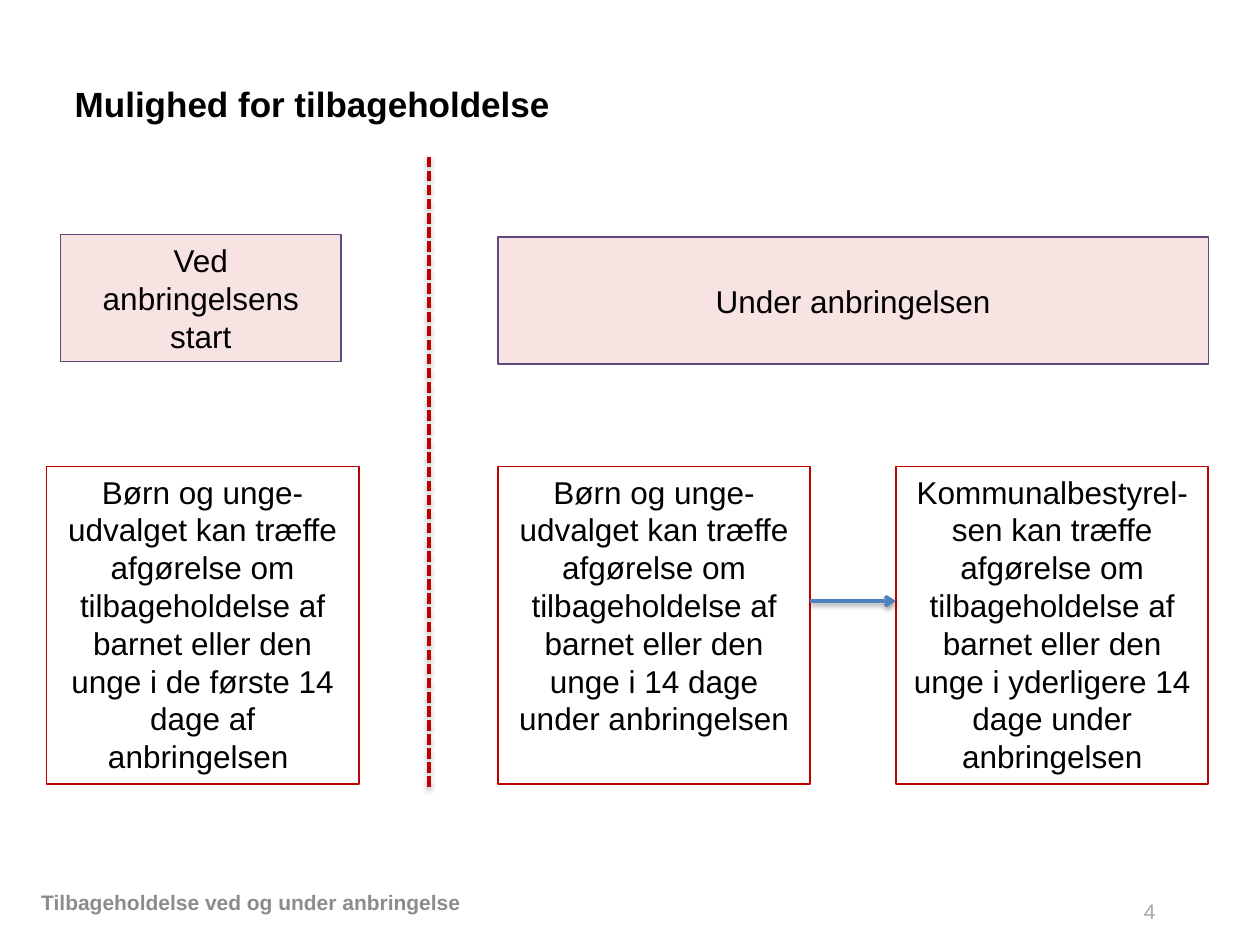
import dataclasses

import pptx
import pptx.dml.color
import pptx.enum.dml
import pptx.enum.shapes
import pptx.enum.text
import pptx.oxml
import pptx.oxml.ns
import pptx.util

Pt = pptx.util.Pt
ALIGN = pptx.enum.text.PP_ALIGN
ANCHOR = pptx.enum.text.MSO_ANCHOR
NS = pptx.oxml.ns.nsdecls("a")


@dataclasses.dataclass(frozen=True)
class Theme:
    """Colours, font and type sizes of the slide."""
    font: str = "Arial"
    ink: str = "000000"
    red: str = "C00000"
    purple: str = "604A7B"
    blue: str = "4F81BD"
    footer: str = "8C8C8C"
    number: str = "A6A6A6"
    title_size: int = 20
    body_size: int = 18
    small_size: int = 12
    tint: int = 11


T = Theme()


def rgb(value):
    """Turn a hex string into a colour."""
    return pptx.dml.color.RGBColor.from_string(value)


def write(shape, text, size=T.body_size, color=T.ink, bold=False,
          align=ALIGN.LEFT, anchor=ANCHOR.TOP):
    """Put formatted text into a shape."""
    tf = shape.text_frame
    tf.word_wrap = True
    tf.vertical_anchor = anchor
    p = tf.paragraphs[0]
    p.alignment = align
    r = p.add_run()
    r.text = text
    r.font.name, r.font.size, r.font.bold = T.font, Pt(size), bold
    r.font.color.rgb = rgb(color)


def add_title(s, text, box):
    """Place the title placeholder in its box."""
    sp = s.shapes.title
    sp.left, sp.top, sp.width, sp.height = map(Pt, box)
    write(sp, text, size=T.title_size, bold=True, anchor=ANCHOR.MIDDLE)


def add_box(s, text, box, line, weight, fill=None, anchor=ANCHOR.TOP):
    """Add an outlined box with centred text and an optional tint."""
    sp = s.shapes.add_shape(pptx.enum.shapes.MSO_SHAPE.RECTANGLE, *map(Pt, box))
    sp.shadow.inherit = False
    sp.line.color.rgb = rgb(line)
    sp.line.width = Pt(weight)
    if fill:
        sp.fill.solid()
        sp.fill.fore_color.rgb = rgb(fill)
        color = sp.fill._xPr.find(".//" + pptx.oxml.ns.qn("a:srgbClr"))
        color.append(pptx.oxml.parse_xml(f'<a:alpha {NS} val="{T.tint * 1000}"/>'))
    else:
        sp.fill.background()
    write(sp, text, align=ALIGN.CENTER, anchor=anchor)


def add_heading(s, text, box):
    """Add a tinted phase heading."""
    add_box(s, text, box, T.purple, 0.75, fill=T.red, anchor=ANCHOR.MIDDLE)


def add_decision(s, text, box):
    """Add a red-framed decision box."""
    add_box(s, text, box, T.red, 1)


def add_line(s, ends, color, dash=None, arrow=False):
    """Add a straight line with a soft shadow below it."""
    kind = pptx.enum.shapes.MSO_CONNECTOR.STRAIGHT
    c = s.shapes.add_connector(kind, *map(Pt, ends))
    c.line.color.rgb = rgb(color)
    c.line.width = Pt(2)
    if dash:
        c.line.dash_style = dash
    if arrow:
        c.line._get_or_add_ln().append(
            pptx.oxml.parse_xml(f'<a:tailEnd {NS} type="arrow"/>'))
    c._element.spPr.append(pptx.oxml.parse_xml(
        f'<a:effectLst {NS}><a:outerShdw blurRad="{Pt(3.1)}" dist="{Pt(1.6)}" '
        f'dir="5400000" rotWithShape="0"><a:srgbClr val="{T.ink}">'
        '<a:alpha val="38000"/></a:srgbClr></a:outerShdw></a:effectLst>'))


def add_label(s, text, box, **fmt):
    """Add a small text box."""
    write(s.shapes.add_textbox(*map(Pt, box)), text, size=T.small_size, **fmt)


def add_start_phase(s, left, top):
    """Place the column for the start of the placement."""
    add_heading(s, "Ved anbringelsens start", (left + 8, top, 160.5, 72.5))
    add_decision(s, "Børn og unge-udvalget kan træffe afgørelse om tilbageholdelse "
                 "af barnet eller den unge i de første 14 dage af anbringelsen ",
                 (left, top + 132.5, 178.5, 181.5))


def add_later_phase(s, left, top, width):
    """Place the heading and two linked decisions during the placement."""
    add_heading(s, "Under anbringelsen", (left, top, width, 72.5))
    w, y = 178.5, top + 131
    right = left + width - w
    add_decision(s, "Børn og unge-udvalget kan træffe afgørelse om tilbageholdelse "
                 "af barnet eller den unge i 14 dage under anbringelsen",
                 (left, y, w, 181.5))
    add_decision(s, "Kommunalbestyrel-sen kan træffe afgørelse om tilbageholdelse "
                 "af barnet eller den unge i yderligere 14 dage under anbringelsen",
                 (right, y, w, 181.5))
    add_line(s, (left + w, y + 77, right, y + 77), T.blue, arrow=True)


def add_footer(s, top):
    """Place the footer text and the page number."""
    add_label(s, "Tilbageholdelse ved og under anbringelse", (16.5, top, 297, 24.5),
              color=T.footer, bold=True, anchor=ANCHOR.MIDDLE)
    add_label(s, "4", (646.5, top + 6.5, 60, 21.5), color=T.number)


def main():
    """Build and save the slide."""
    prs = pptx.Presentation()
    prs.slide_width, prs.slide_height = Pt(720), Pt(540)
    s = prs.slides.add_slide(prs.slide_layouts[5])
    add_title(s, "Mulighed for tilbageholdelse", (35.5, 13.5, 462, 91.5))
    add_start_phase(s, 26.5, 134)
    add_line(s, (245, 89.5, 245, 450.5), T.red,
             dash=pptx.enum.dml.MSO_LINE.SQUARE_DOT)
    add_later_phase(s, 284.5, 135.5, 406)
    add_footer(s, 503.5)
    prs.save("out.pptx")


if __name__ == "__main__":
    main()
